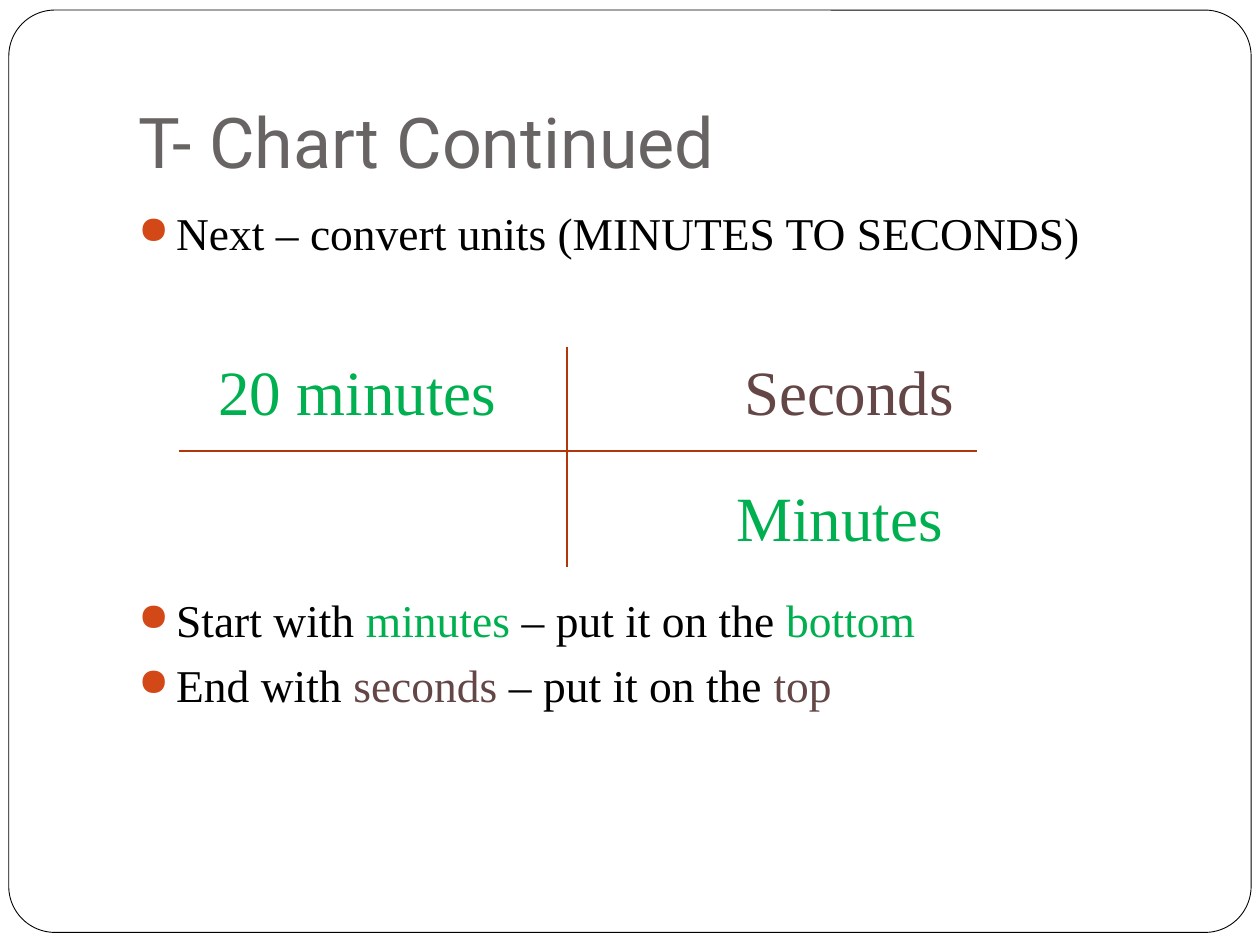
from lxml import etree
from pptx import Presentation
from pptx.dml.color import RGBColor
from pptx.enum.shapes import MSO_CONNECTOR as Connector, MSO_SHAPE as Shape
from pptx.enum.text import MSO_ANCHOR as Anchor, PP_ALIGN as Align
from pptx.oxml.ns import qn
from pptx.util import Inches, Pt

COLORS = {"ink": "000000", "title": "696464", "bullet": "D34817", "rule": "B1360B",
          "minutes": "00B050", "seconds": "644646"}
BODY_FONT = "Times New Roman"
BULLETS = [
    (5.8, [("Next – convert units (MINUTES TO SECONDS)", "ink")]),
    (190, [("Start with ", "ink"), ("minutes", "minutes"),
           (" – put it on the ", "ink"), ("bottom", "minutes")]),
    (5.8, [("End with ", "ink"), ("seconds", "seconds"),
           (" – put it on the ", "ink"), ("top", "seconds")]),
]


def color(name):
    return RGBColor.from_string(COLORS[name])


def set_font(font, name, size):
    font.name, font.size = name, Pt(size)


def add_frame(page, left, top, width, height):
    frame = page.shapes.add_shape(Shape.ROUNDED_RECTANGLE, Inches(left), Inches(top),
                                  Inches(width), Inches(height))
    frame.adjustments[0] = 0.05
    frame.shadow.inherit = False
    frame.fill.background()
    frame.line.color.rgb = color("ink")
    frame.line.width = Pt(0.5)


def set_title(page, text, left, top, width, height):
    title = page.shapes.title
    title.left, title.top = Inches(left), Inches(top)
    title.width, title.height = Inches(width), Inches(height)
    frame = title.text_frame
    frame.text = text
    frame.vertical_anchor = Anchor.BOTTOM
    frame.margin_bottom = Inches(0.1)
    para = frame.paragraphs[0]
    para.alignment = Align.LEFT
    set_font(para.font, "Roboto", 40)
    para.font.color.rgb = color("title")


def add_text_box(page, left, top, width, height):
    box = page.shapes.add_textbox(Inches(left), Inches(top), Inches(width), Inches(height))
    box.text_frame.word_wrap = True
    return box.text_frame


def set_bullet(para):
    props = para._p.get_or_add_pPr()
    props.set("marL", str(Inches(0.3)))
    props.set("indent", str(-Inches(0.3)))
    tint = etree.SubElement(props, qn("a:buClr"))
    etree.SubElement(tint, qn("a:srgbClr"), val=COLORS["bullet"])
    etree.SubElement(props, qn("a:buSzPct"), val="85000")
    etree.SubElement(props, qn("a:buChar"), char="●")


def add_bullets(page, left, top, width, height):
    frame = add_text_box(page, left, top, width, height)
    for index, (gap, spans) in enumerate(BULLETS):
        para = frame.add_paragraph() if index else frame.paragraphs[0]
        set_bullet(para)
        para.space_before = Pt(gap)
        set_font(para.font, BODY_FONT, 26)
        for text, tone in spans:
            span = para.add_run()
            span.text = text
            span.font.color.rgb = color(tone)


def add_rule(page, x1, y1, x2, y2):
    rule = page.shapes.add_connector(Connector.STRAIGHT, Inches(x1), Inches(y1),
                                     Inches(x2), Inches(y2))
    rule.line.color.rgb = color("rule")
    rule.line.width = Pt(0.75)
    etree.SubElement(rule._element.spPr, qn("a:effectLst"))


def add_label(page, text, tone, align, left, top, width):
    para = add_text_box(page, left, top, width, 0.71).paragraphs[0]
    para.text = text
    para.alignment = align
    set_font(para.font, BODY_FONT, 36)
    para.font.color.rgb = color(tone)


def add_t_chart(page, left, top, width, height):
    """Draw the crossed rules and the unit labels around them."""
    middle = left + 3.08
    add_rule(page, left, top + 0.83, left + width, top + 0.83)
    add_rule(page, middle, top, middle, top + height)
    add_label(page, "20 minutes", "minutes", Align.CENTER, left, top, 2.83)
    add_label(page, "Minutes", "minutes", Align.RIGHT, middle + 0.33, top + 1, 2.75)
    add_label(page, "Seconds", "seconds", Align.RIGHT, middle + 0.42, top, 2.75)


def main():
    deck = Presentation()
    deck.slide_width, deck.slide_height = Inches(10), Inches(7.5)
    page = deck.slides.add_slide(deck.slide_layouts[5])
    add_frame(page, 0.07, 0.08, 9.86, 7.32)
    set_title(page, "T- Chart Continued", 1, 0.3, 8.5, 1.25)
    add_bullets(page, 1, 1.58, 8.5, 5)
    add_t_chart(page, 1.42, 2.75, 6.33, 1.75)
    deck.save("out.pptx")


if __name__ == "__main__":
    main()
